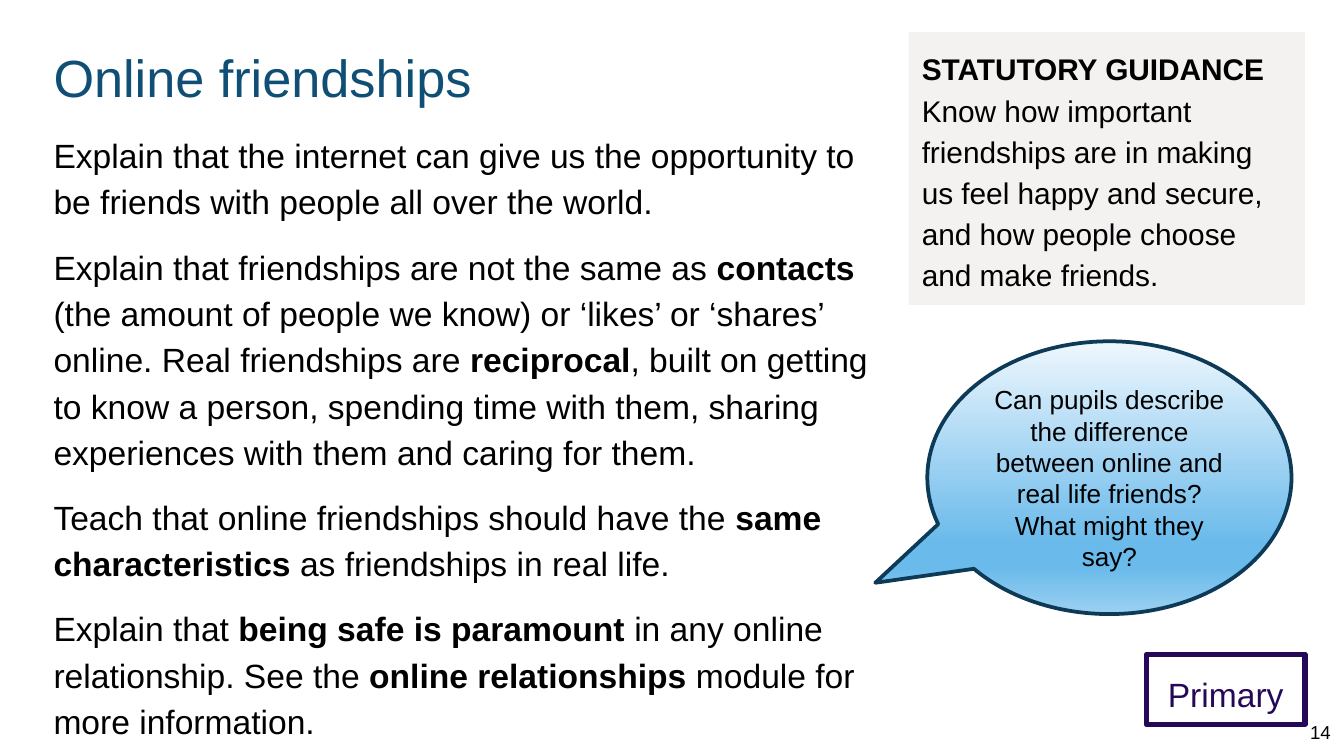
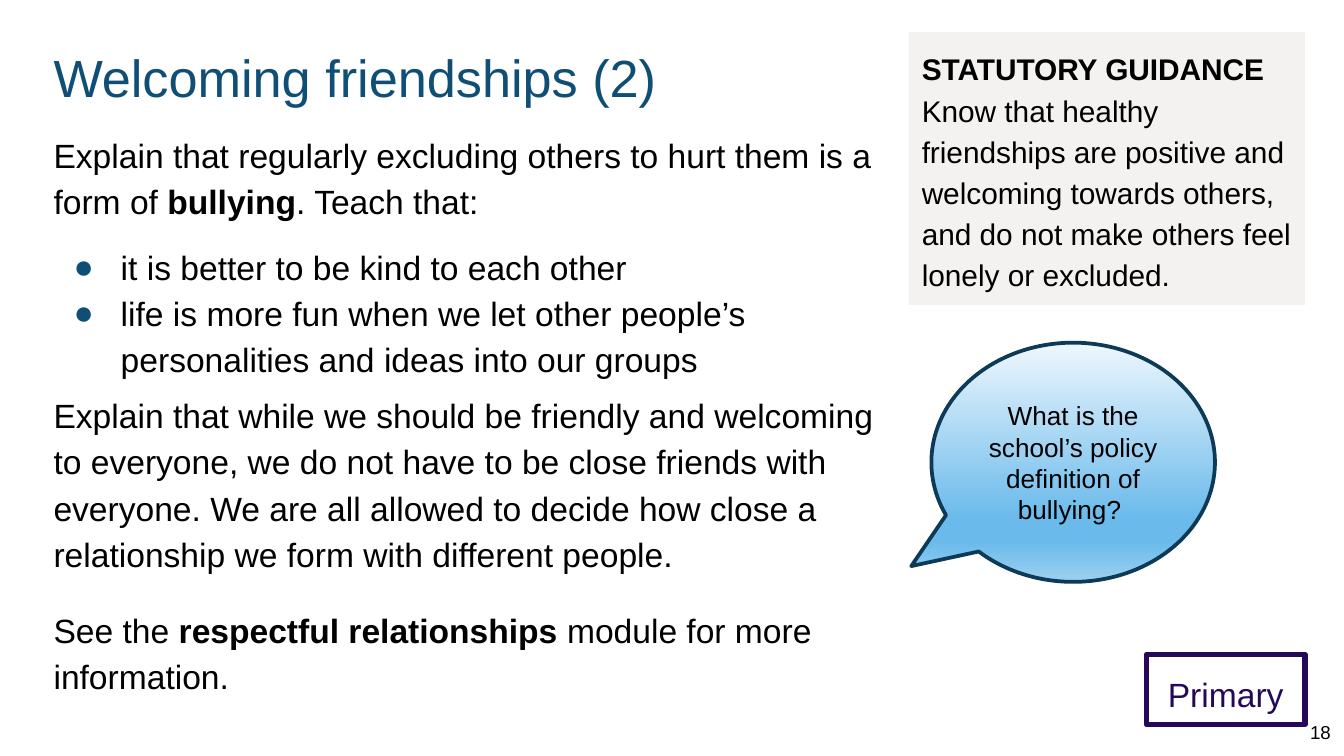
import copy
import lxml.etree
import pptx
import pptx.dml.color
import pptx.enum.shapes
import pptx.enum.text
import pptx.oxml
import pptx.oxml.ns
import pptx.util

COLOURS = {
    "title": "104F75",
    "text": "000000",
    "stage": "260859",
    "panel": "F3F2F1",
    "outline": "0C3A57",
}
BUBBLE_STOPS = {0: "EEF7FD", 74: "6ABAEB", 83: "6ABAEB", 100: "9CD1F1"}
FONT = "Arial"
COLUMNS = 100
SHAPES = pptx.enum.shapes.MSO_SHAPE
ALIGN = pptx.enum.text.PP_ALIGN
ANCHOR = pptx.enum.text.MSO_ANCHOR
BODY_BULLET = {"bullet": True}
HEADING = "STATUTORY GUIDANCE"

SLIDES = [
    {
        "title": "Online friendships",
        "number": "14",
        "body": [
            ("Explain that the internet can give us the opportunity to be friends with "
             "people all over the world.", {}),
            ("Explain that friendships are not the same as **contacts** (the amount of "
             "people we know) or ‘likes’ or ‘shares’ online. Real friendships are "
             "**reciprocal**, built on getting to know a person, spending time with them, "
             "sharing experiences with them and caring for them.", {"before": 10}),
            ("Teach that online friendships should have the **same characteristics** as "
             "friendships in real life.", {"before": 10}),
            ("Explain that **being safe is paramount** in any online relationship. See the "
             "**online relationships** module for more information.", {"before": 10}),
        ],
        "guidance": "Know how important friendships are in making us feel happy and "
                    "secure, and how people choose and make friends.",
        "question": "Can pupils describe the difference between online and real life "
                    "friends? What might they say?",
        "bubble": (69, 25.4, 27.1, 20.3),
        "tail": (-0.643, 0.385),
    },
    {
        "title": "Welcoming friendships (2)",
        "number": "18",
        "body": [
            ("Explain that regularly excluding others to hurt them is a form of "
             "**bullying**. Teach that:", {}),
            ("it is better to be kind to each other", {"before": 10, **BODY_BULLET}),
            ("life is more fun when we let other people’s personalities and ideas into "
             "our groups", BODY_BULLET),
            ("Explain that while we should be friendly and welcoming to everyone, we do "
             "not have to be close friends with everyone. We are all allowed to decide "
             "how close a relationship we form with different people.", {"before": 5}),
            ("See the **respectful relationships** module for more information.",
             {"before": 16}),
        ],
        "guidance": "Know that healthy friendships are positive and welcoming towards "
                    "others, and do not make others feel lonely or excluded.",
        "question": "What is the school’s policy definition of bullying? ",
        "bubble": (69.3, 25.5, 21.1, 17.8),
        "tail": (-0.571, 0.434),
    },
]


class Deck:
    """Hold the style and the current slide, and draw each kind of element."""

    def __init__(self):
        self.presentation = pptx.Presentation()
        self.presentation.slide_width = pptx.util.Inches(10)
        self.presentation.slide_height = pptx.util.Inches(5.625)
        self.cell = self.presentation.slide_width / COLUMNS
        self.slide = None

    def start_slide(self):
        self.slide = self.presentation.slides.add_slide(self.presentation.slide_layouts[6])

    def place(self, box):
        return [round(length * self.cell) for length in box]

    def colour(self, name):
        return pptx.dml.color.RGBColor.from_string(COLOURS[name])

    def bullet(self, paragraph):
        properties = paragraph._p.get_or_add_pPr()
        properties.set("marL", str(round(5 * self.cell)))
        properties.set("indent", str(round(-3.5 * self.cell)))
        namespace = pptx.oxml.ns.nsdecls("a")
        for markup in (
            f'<a:buClr {namespace}><a:srgbClr val="{COLOURS["title"]}"/></a:buClr>',
            f'<a:buFont {namespace} typeface="{FONT}"/>',
            f'<a:buChar {namespace} char="●"/>',
        ):
            properties.append(pptx.oxml.parse_xml(markup))

    def add_run(self, paragraph, text, size, colour, bold):
        run = paragraph.add_run()
        run.text = text
        for attribute, value in {"name": FONT, "size": pptx.util.Pt(size), "bold": bold}.items():
            setattr(run.font, attribute, value)
        run.font.color.rgb = self.colour(colour)
        return run

    def fill_text(self, shape, paragraphs, size, colour="text", align=ALIGN.LEFT,
                  spacing=1.15, anchor=ANCHOR.TOP, inset=1):
        frame = shape.text_frame
        margin, side = round(inset * self.cell), round(self.cell)
        settings = {
            "word_wrap": True, "vertical_anchor": anchor,
            "margin_left": side, "margin_right": side,
            "margin_top": margin, "margin_bottom": margin,
        }
        for attribute, value in settings.items():
            setattr(frame, attribute, value)
        for index, (text, options) in enumerate(paragraphs):
            paragraph = frame.add_paragraph() if index else frame.paragraphs[0]
            layout = {
                "alignment": align, "line_spacing": spacing,
                "space_before": pptx.util.Pt(options.get("before", 0)),
            }
            for attribute, value in layout.items():
                setattr(paragraph, attribute, value)
            if options.get("bullet"):
                self.bullet(paragraph)
            if "heading" in options:
                heading = self.add_run(paragraph, options["heading"], size, colour, True)
                paragraph.add_line_break()
                paragraph._p[-1].append(copy.deepcopy(heading._r.rPr))
            for part, words in enumerate(text.split("**")):
                if words:
                    self.add_run(paragraph, words, size, colour, part % 2 == 1)

    def text(self, box, paragraphs, size, **style):
        self.fill_text(self.slide.shapes.add_textbox(*self.place(box)), paragraphs, size, **style)

    def shape(self, kind, box, fill=None, line=None, width=0):
        shape = self.slide.shapes.add_shape(kind, *self.place(box))
        shape.shadow.inherit = False
        if fill:
            shape.fill.solid()
            shape.fill.fore_color.rgb = self.colour(fill)
        else:
            shape.fill.background()
        if line:
            shape.line.color.rgb = self.colour(line)
            shape.line.width = pptx.util.Pt(width)
        else:
            shape.line.fill.background()
        return shape

    def panel(self, box, paragraphs, size, fill=None, line=None, width=0, **style):
        self.fill_text(self.shape(SHAPES.RECTANGLE, box, fill, line, width),
                       paragraphs, size, **style)

    def bubble(self, box, tail, question):
        shape = self.shape(SHAPES.OVAL_CALLOUT, box, line="outline", width=2)
        for index, value in enumerate(tail):
            shape.adjustments[index] = value
        shape.fill.gradient()
        shape.fill.gradient_angle = 270
        stops = shape._element.spPr.find(".//" + pptx.oxml.ns.qn("a:gsLst"))
        for stop in list(stops):
            stops.remove(stop)
        for position, colour in BUBBLE_STOPS.items():
            stop = lxml.etree.SubElement(stops, pptx.oxml.ns.qn("a:gs"), pos=str(position * 1000))
            lxml.etree.SubElement(stop, pptx.oxml.ns.qn("a:srgbClr"), val=colour)
        self.fill_text(shape, [(question, {})], 14, align=ALIGN.CENTER, spacing=1,
                       anchor=ANCHOR.MIDDLE, inset=0.5)

    def lesson(self, content):
        self.start_slide()
        self.text((3, 2.4, 64.1, 6.3), [(content["title"], {})], 28, colour="title", spacing=1)
        self.panel((85.3, 48.7, 11.8, 5.2), [("Primary", {})], 18, line="stage", width=3,
                   colour="stage", align=ALIGN.CENTER)
        self.text((3, 8.6, 64.1, 40.1), content["body"], 18)
        self.panel((67.6, 2.4, 29.5, 20.3), [(content["guidance"], {"heading": HEADING})], 16,
                   fill="panel")
        self.text((96.1, 52.6, 3.9, 3.7), [(content["number"], {})], 10,
                  align=ALIGN.RIGHT, spacing=1, anchor=ANCHOR.MIDDLE)
        self.bubble(content["bubble"], content["tail"], content["question"])


def main():
    deck = Deck()
    for content in SLIDES:
        deck.lesson(content)
    deck.presentation.save("out.pptx")


if __name__ == "__main__":
    main()
